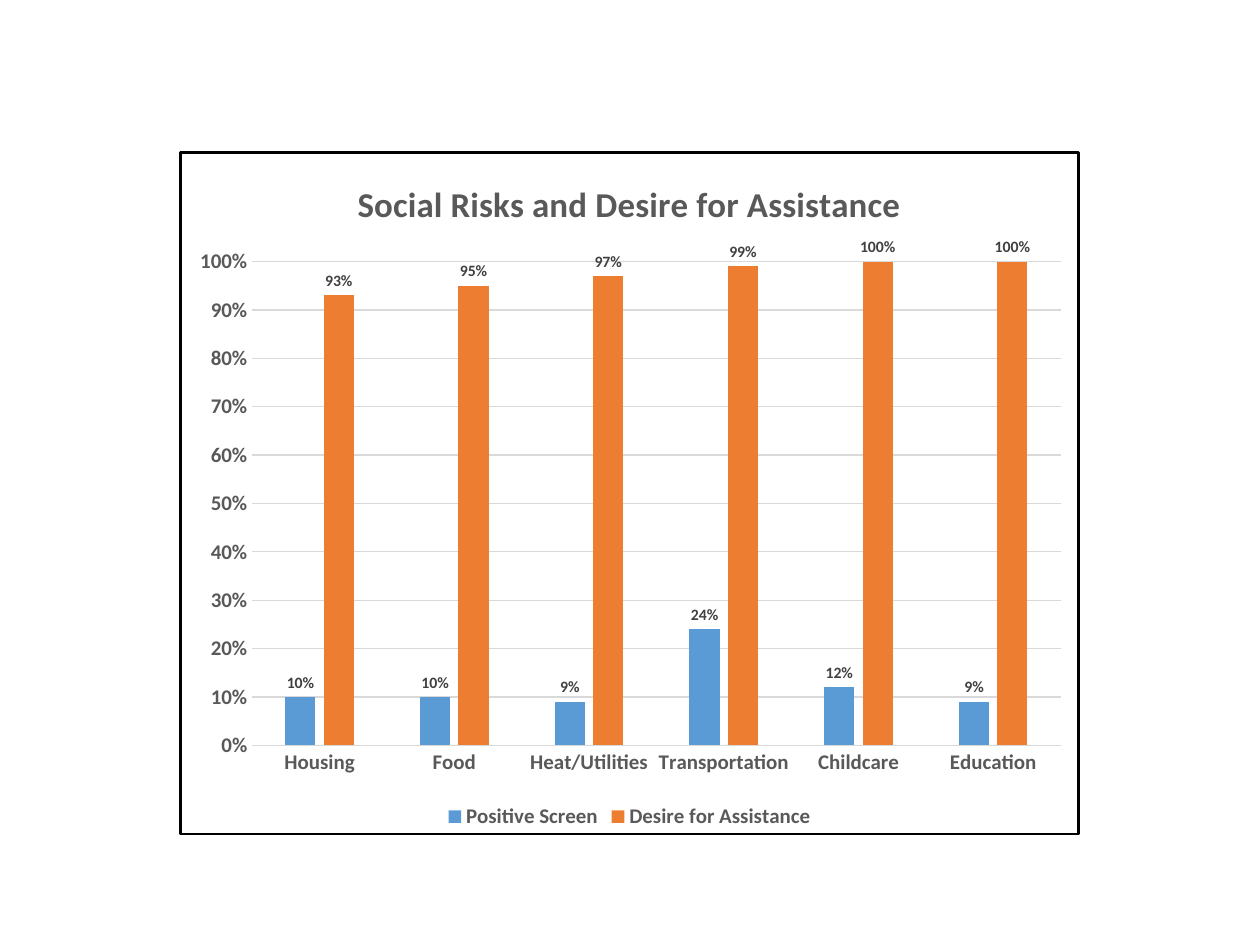
"""Build a slide with a column chart of social risks and desire for assistance."""
from dataclasses import dataclass

from lxml import etree
from pptx import Presentation
from pptx.chart.axis import CategoryAxis, ValueAxis
from pptx.chart.chart import Chart
from pptx.chart.data import CategoryChartData
from pptx.chart.series import BarSeries
from pptx.dml.color import RGBColor
from pptx.enum.chart import XL_CHART_TYPE, XL_LABEL_POSITION, XL_LEGEND_POSITION, XL_TICK_MARK
from pptx.oxml import parse_xml
from pptx.oxml.ns import nsdecls, qn
from pptx.slide import Slide
from pptx.text.text import Font
from pptx.util import Cm, Pt

CLUSTERED = XL_CHART_TYPE.COLUMN_CLUSTERED
OUTSIDE_END = XL_LABEL_POSITION.OUTSIDE_END
BOTTOM = XL_LEGEND_POSITION.BOTTOM
NO_TICK = XL_TICK_MARK.NONE


@dataclass(frozen=True)
class Theme:
    font: str = "Calibri"
    text: str = "595959"
    label: str = "404040"
    grid: str = "D9D9D9"
    border: str = "000000"
    title_size: float = 20
    axis_size: float = 12
    label_size: float = 9
    grid_width: float = 0.75
    border_width: float = 1.5


@dataclass(frozen=True)
class Measure:
    name: str
    color: str
    values: tuple[float, ...]


THEME = Theme()
PERCENT = "0%"
TITLE = "Social Risks and Desire for Assistance"
CATEGORIES = ("Housing", "Food", "Heat/Utilities", "Transportation", "Childcare", "Education")
MEASURES = (
    Measure("Positive Screen", "5B9BD5", (0.1, 0.1, 0.09, 0.24, 0.12, 0.09)),
    Measure("Desire for Assistance", "ED7D31", (0.93, 0.95, 0.97, 0.99, 1, 1)),
)
PLOT_AREA = {"x": 0.08, "y": 0.16, "w": 0.9, "h": 0.71}


def format_font(font: Font, size: float, color: str) -> None:
    font.name = THEME.font
    font.size = Pt(size)
    font.bold = True
    font.color.rgb = RGBColor.from_string(color)


def format_title(chart: Chart) -> None:
    chart.has_title = True
    chart.chart_title.include_in_layout = False
    paragraph = chart.chart_title.text_frame.paragraphs[0]
    paragraph.text = TITLE
    format_font(paragraph.runs[0].font, THEME.title_size, THEME.text)


def format_axis(axis: CategoryAxis | ValueAxis) -> None:
    axis.major_tick_mark = axis.minor_tick_mark = NO_TICK
    format_font(axis.tick_labels.font, THEME.axis_size, THEME.text)


def format_axes(chart: Chart) -> None:
    category_axis, value_axis = chart.category_axis, chart.value_axis
    for axis in (category_axis, value_axis):
        format_axis(axis)
    value_axis.minimum_scale, value_axis.maximum_scale, value_axis.major_unit = 0, 1, 0.1
    value_axis.tick_labels.number_format = PERCENT
    value_axis.tick_labels.number_format_is_linked = False
    value_axis.format.line.fill.background()
    for line in (category_axis.format.line, value_axis.major_gridlines.format.line):
        line.color.rgb = RGBColor.from_string(THEME.grid)
        line.width = Pt(THEME.grid_width)


def format_series(series: BarSeries, measure: Measure) -> None:
    series.format.fill.solid()
    series.format.fill.fore_color.rgb = RGBColor.from_string(measure.color)
    series.invert_if_negative = False
    labels = series.data_labels
    labels.show_value = True
    labels.position = OUTSIDE_END
    labels.number_format = PERCENT
    labels.number_format_is_linked = False
    format_font(labels.font, THEME.label_size, THEME.label)


def format_legend(chart: Chart) -> None:
    chart.has_legend = True
    chart.legend.position = BOTTOM
    chart.legend.include_in_layout = False
    format_font(chart.legend.font, THEME.axis_size, THEME.text)


def add_border(chart: Chart) -> None:
    border = parse_xml(
        f'<c:spPr {nsdecls("c", "a")}><a:solidFill><a:srgbClr val="FFFFFF"/></a:solidFill>'
        f'<a:ln w="{Pt(THEME.border_width)}"><a:solidFill><a:srgbClr val="{THEME.border}"/>'
        "</a:solidFill></a:ln></c:spPr>"
    )
    chart.element.find(qn("c:chart")).addnext(border)


def place_plot_area(chart: Chart) -> None:
    plot_area = chart.element.find(qn("c:chart")).find(qn("c:plotArea"))
    for old_layout in plot_area.findall(qn("c:layout")):
        plot_area.remove(old_layout)
    layout = parse_xml(f'<c:layout {nsdecls("c")}><c:manualLayout/></c:layout>')
    settings = {"layoutTarget": "inner", "xMode": "edge", "yMode": "edge", **PLOT_AREA}
    for name, value in settings.items():
        etree.SubElement(layout[0], qn(f"c:{name}")).set("val", str(value))
    plot_area.insert(0, layout)


def add_risk_chart(slide: Slide) -> None:
    data = CategoryChartData(number_format=PERCENT)
    data.categories = CATEGORIES
    for measure in MEASURES:
        data.add_series(measure.name, measure.values)
    chart = slide.shapes.add_chart(
        CLUSTERED, Cm(3.61), Cm(3.05), Cm(18.16), Cm(13.79), data
    ).chart
    chart.font.name = THEME.font
    chart.font.size = Pt(10)
    plot = chart.plots[0]
    plot.gap_width, plot.overlap, plot.vary_by_categories = 219, -27, False
    for series, measure in zip(plot.series, MEASURES):
        format_series(series, measure)
    format_title(chart)
    format_axes(chart)
    format_legend(chart)
    place_plot_area(chart)
    add_border(chart)


def main() -> None:
    presentation = Presentation()
    presentation.slide_width, presentation.slide_height = Cm(25.4), Cm(19.05)
    slide = presentation.slides.add_slide(presentation.slide_layouts[6])
    add_risk_chart(slide)
    presentation.save("out.pptx")


if __name__ == "__main__":
    main()
